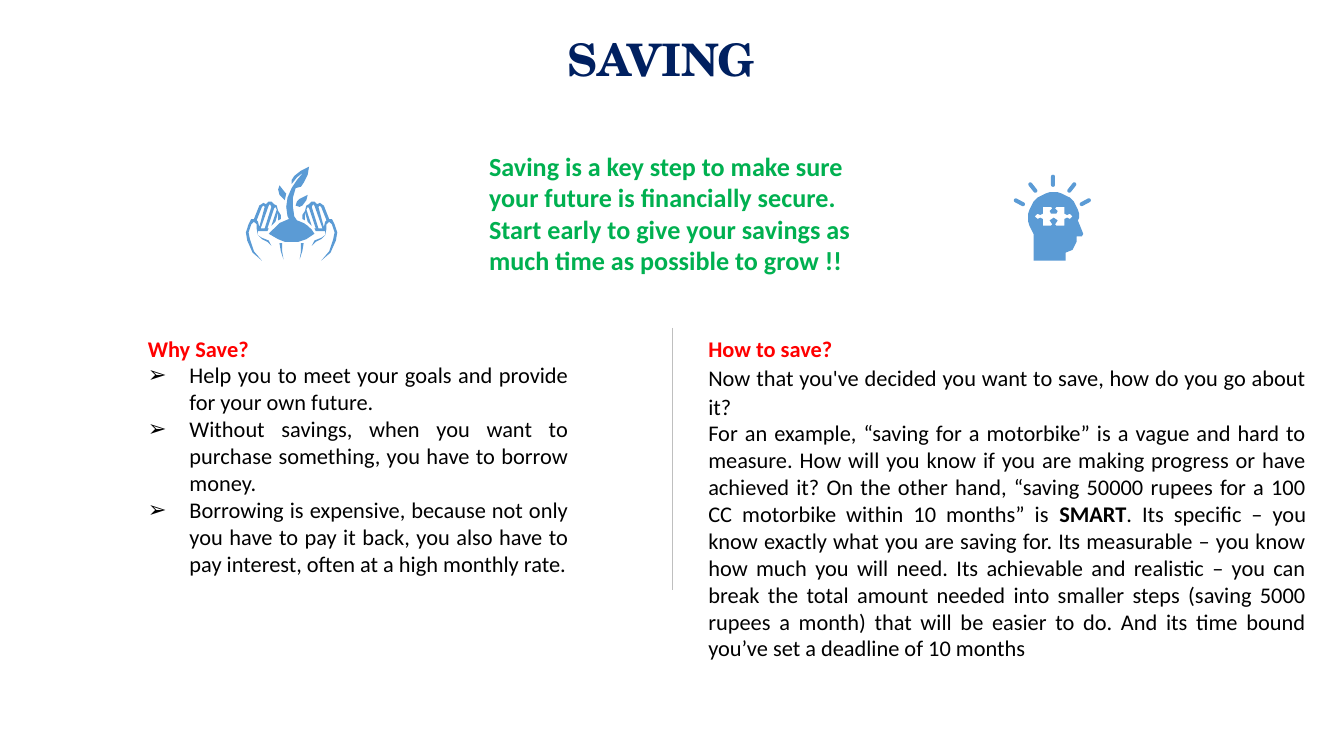
import math
from pptx import Presentation
from pptx import util as u
from pptx.dml.color import RGBColor
from pptx.enum import shapes, text
from pptx.oxml.ns import qn
from lxml import etree

PX = 9144  # 100 px to the inch
WIDE = 1000
BLUE, RED, BLACK = "5B9BD5", "FF0000", "000000"
AXIS = 217  # middle of the plant icon
HEAD = 784  # middle of the head icon

WHY = [
    "Help you to meet your goals and provide for your own future.",
    "Without savings, when you want to purchase something, you have to borrow money.",
    "Borrowing is expensive, because not only you have to pay it back, you also "
    "have to pay interest, often at a high monthly rate.",
]
ASK = "Now that you've decided you want to save, how do you go about it?"
SMART = [
    ("For an example, “saving for a motorbike” is a vague and hard to measure. "
     "How will you know if you are making progress or have achieved it? On the "
     "other hand, “saving 50000 rupees for a 100 CC motorbike within 10 months” is ", False),
    ("SMART", True),
    (". Its specific – you know exactly what you are saving for. Its measurable – "
     "you know how much you will need. Its achievable and realistic – you can "
     "break the total amount needed into smaller steps (saving 5000 rupees a "
     "month) that will be easier to do. And its time bound you’ve set a deadline "
     "of 10 months", False),
]
CLAIM = ("Saving is a key step to make sure your future is financially secure. "
         "Start early to give your savings as much time as possible to grow !!")

# Left hand: outline, then the gaps between the fingers
HAND = [
    [(195, 177), (192, 175), (192, 172), (199, 172), (200, 170), (199, 170),
     (204, 155), (205, 154), (206, 156), (202, 168), (205, 165), (207, 158),
     (207, 164), (209, 163), (209, 160), (207, 157), (206, 153), (204, 152),
     (202, 150), (200, 150), (198, 152), (196, 151), (193, 153), (189, 163),
     (187, 163), (185, 167), (183, 173), (184, 179), (188, 188), (195, 194),
     (189, 187), (186, 178), (185, 173), (187, 167), (189, 165), (191, 167),
     (191, 170), (192, 175), (195, 178), (199, 180), (202, 183), (200, 179)],
    [(200, 153), (201, 152), (202, 154), (197, 170), (194, 170)],
    [(191, 164), (195, 154), (196, 153), (197, 154), (193, 169), (192, 165)],
]
WRIST = [[(210, 187), (210, 181), (208, 181), (209, 187), (211, 193)]]
PLANT = [
    # Stem with the top leaf, standing on the soil
    [(234, 174), (232, 171), (229, 168), (226, 166), (221, 164), (219, 161),
     (218, 154), (218, 147), (220, 140), (224, 139), (226, 136), (229, 130),
     (230, 124), (224, 127), (219, 131), (217, 134), (217, 137), (221, 132),
     (226, 128), (221, 134), (217, 140), (214, 147), (213, 154), (214, 161),
     (215, 163), (208, 166), (204, 170), (202, 172), (200, 174), (207, 178),
     (212, 180), (217, 180), (222, 180), (228, 178)],
    # Small leaves
    [(211, 148), (212, 149), (213, 144), (212, 143), (208, 138), (207, 141), (208, 145)],
    [(220, 153), (223, 154), (225, 153), (228, 149), (229, 145), (223, 148), (221, 150)],
]
# Left half of the puzzle piece
PIECE = [(784, 162), (781, 164), (783, 167), (782, 168), (776, 168), (776, 163),
         (774, 162), (772, 163), (770, 161), (772, 159), (774, 160), (776, 159),
         (776, 154), (782, 154), (783, 155), (781, 157), (782, 159), (784, 159)]
# Middle and turn of each ray
RAYS = [(783, 134, 0), (797, 139, 38), (768, 139, -38), (807, 150, 62), (758, 150, -62)]


def tint(code):
    return RGBColor.from_string(code)


def place(shape, box):
    shape.left, shape.top, shape.width, shape.height = [n * PX for n in box]


def add_run(par, words, size, color, bold, font="Calibri"):
    run = par.add_run()
    run.text = words
    run.font.name, run.font.size, run.font.bold = font, u.Pt(size), bold
    run.font.color.rgb = tint(color)


def add_par(frame, runs, color=BLACK, mark=None, line=1.0):
    par = frame.paragraphs[0]
    if par.runs:
        par = frame.add_paragraph()
    props = par._p.get_or_add_pPr()
    dent = 31 * PX if mark else 0
    props.set("marL", str(dent))
    props.set("indent", str(-dent))
    if mark:
        etree.SubElement(props, qn("a:buChar")).set("char", mark)
    else:
        etree.SubElement(props, qn("a:buNone"))
    par.alignment = text.PP_ALIGN.JUSTIFY
    par.space_before, par.line_spacing = u.Pt(0), line
    for words, bold in runs:
        add_run(par, words, 12, color, bold)


def add_col(holder, box, head):
    place(holder, box)
    frame = holder.text_frame
    frame.auto_size = text.MSO_AUTO_SIZE.NONE
    add_par(frame, [(head, True)], RED)
    return frame


def paint(shape):
    shape.shadow.inherit = False
    shape.fill.solid()
    shape.fill.fore_color.rgb = tint(BLUE)
    shape.line.fill.background()


def add_form(slide, rings):
    form = slide.shapes.build_freeform(*rings[0][0], scale=PX)
    for i, ring in enumerate(rings):
        if i:
            form.move_to(*ring[0])
        form.add_line_segments(ring[1:], close=True)
    paint(form.convert_to_shape())


def flip(ring, axis):
    return [(2 * axis - x, y) for x, y in ring]


def add_plant(slide):
    for part in (HAND, WRIST):
        add_form(slide, part)
        add_form(slide, [flip(ring, AXIS) for ring in part])
    add_form(slide, PLANT)


def add_head(slide):
    turns = [math.radians(a) for a in range(0, 221, 10)]
    skull = [(HEAD + 19 * math.cos(a), 162 - 19 * math.sin(a)) for a in turns]
    face = [(769, 194), (793, 194), (793, 188), (798, 186), (801, 180),
            (801, 176), (805, 176), (806, 174), (802, 164)]
    add_form(slide, [skull + face, PIECE + flip(PIECE, HEAD)[::-1]])
    for x, y, turn in RAYS:
        ray = slide.shapes.add_shape(shapes.MSO_SHAPE.ROUNDED_RECTANGLE, 0, 0, 0, 0)
        place(ray, (x - 1, y - 4, 3, 9))
        ray.adjustments[0] = 0.5
        ray.rotation = turn
        paint(ray)


def add_rule(slide):
    rule = slide.shapes.add_connector(
        shapes.MSO_CONNECTOR.STRAIGHT, 500 * PX, 244 * PX, 500 * PX, 439 * PX)
    rule.line.color.rgb = tint("BFBFBF")
    rule.line.width = u.Pt(0.5)
    etree.SubElement(rule._element.spPr, qn("a:effectLst"))


def add_claim(slide):
    box = slide.shapes.add_textbox(0, 0, 0, 0)
    place(box, (354, 107, 309, 104))
    frame = box.text_frame
    frame.word_wrap = True
    frame.auto_size = text.MSO_AUTO_SIZE.SHAPE_TO_FIT_TEXT
    add_run(frame.paragraphs[0], CLAIM, 14, "00B050", True)


def add_title(slide):
    title = slide.shapes.title
    place(title, (61, 19, 862, 54))
    title.text_frame.auto_size = text.MSO_AUTO_SIZE.NONE
    title.text_frame.vertical_anchor = text.MSO_ANCHOR.MIDDLE
    par = title.text_frame.paragraphs[0]
    par.alignment, par.line_spacing = text.PP_ALIGN.CENTER, 0.9
    add_run(par, "SAVING", 24, "002060", True, "TeX Gyre Schola")


def main():
    deck = Presentation()
    deck.slide_width, deck.slide_height = WIDE * PX, WIDE * PX * 9 // 16
    slide = deck.slides.add_slide(deck.slide_layouts[3])
    add_title(slide)

    # Two columns with a rule between
    why = add_col(slide.placeholders[1], (100, 244, 333, 196), "Why Save?")
    for words in WHY:
        add_par(why, [(words, False)], mark="➢")
    add_rule(slide)
    how = add_col(slide.placeholders[2], (517, 244, 465, 196), "How to save?")
    add_par(how, [(ASK, False)], line=1.08)
    add_par(how, SMART)

    # Claim between two icons
    add_claim(slide)
    add_plant(slide)
    add_head(slide)
    deck.save("out.pptx")


if __name__ == "__main__":
    main()
